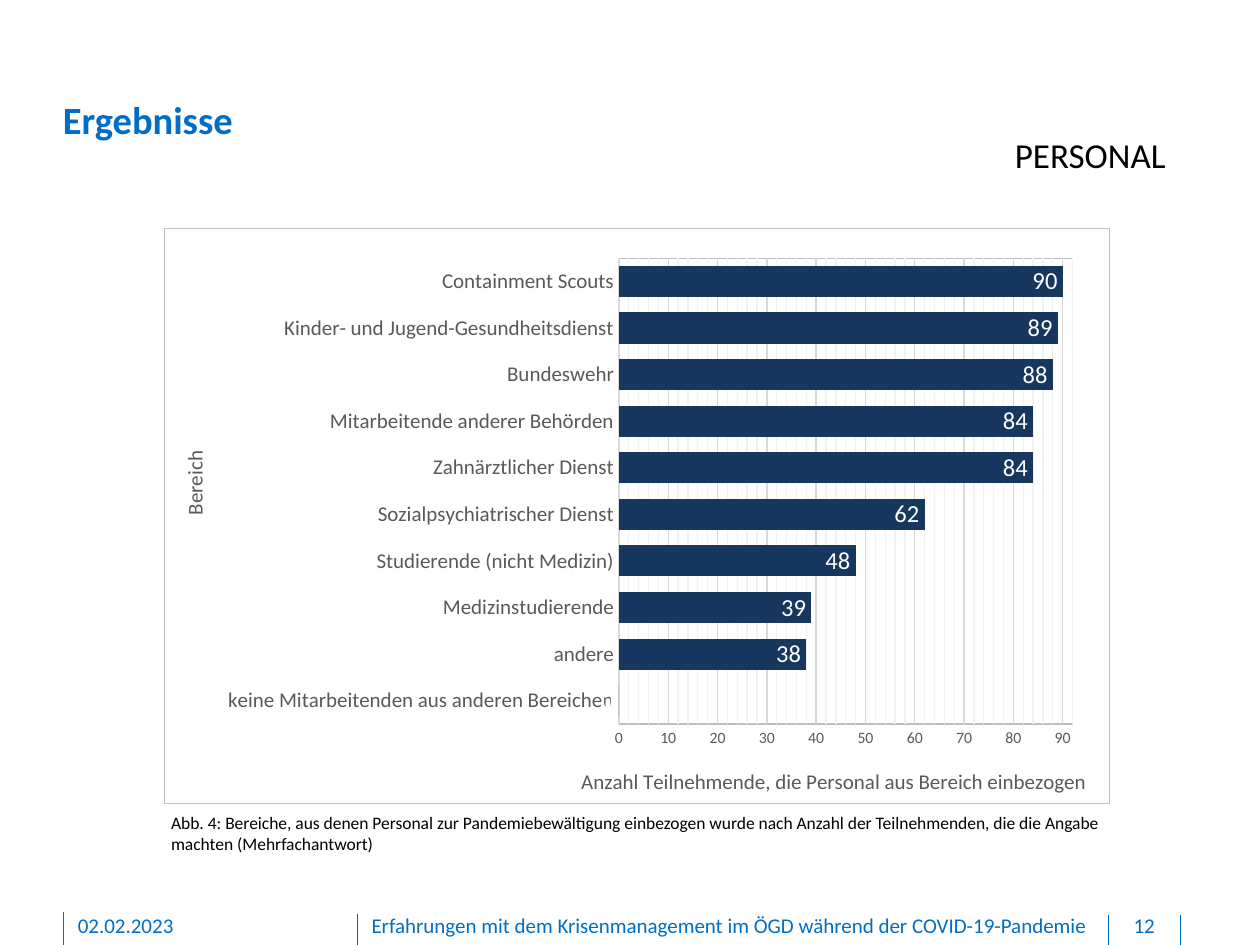
"""Build the results slide on staff areas with a horizontal bar chart."""
from copy import deepcopy

from lxml import etree
from pptx import Presentation
from pptx.chart.data import CategoryChartData
from pptx.dml.color import RGBColor
from pptx.enum.chart import XL_CHART_TYPE, XL_LABEL_POSITION, XL_TICK_MARK
from pptx.enum.shapes import MSO_CONNECTOR
from pptx.enum.text import PP_ALIGN
from pptx.oxml import parse_xml
from pptx.oxml.ns import nsdecls, qn
from pptx.util import Cm, Pt

BAR = XL_CHART_TYPE.BAR_CLUSTERED
INSIDE_END = XL_LABEL_POSITION.INSIDE_END
NO_TICK = XL_TICK_MARK.NONE
STRAIGHT = MSO_CONNECTOR.STRAIGHT
LEFT, CENTER, RIGHT = PP_ALIGN.LEFT, PP_ALIGN.CENTER, PP_ALIGN.RIGHT

BLUE = RGBColor(0x00, 0x6E, 0xC7)
NAVY = RGBColor(0x17, 0x37, 0x5E)
BLACK = RGBColor(0x00, 0x00, 0x00)
WHITE = RGBColor(0xFF, 0xFF, 0xFF)
GRAY = RGBColor(0x59, 0x59, 0x59)
BORDER = RGBColor(0xBF, 0xBF, 0xBF)
GRID = RGBColor(0xD9, 0xD9, 0xD9)
MINOR_GRID = RGBColor(0xF2, 0xF2, 0xF2)
FONT = "Calibri"


def set_font(font, size, color, bold=False):
    values = {"name": FONT, "size": Pt(size), "bold": bold}
    for key, value in values.items():
        setattr(font, key, value)
    font.color.rgb = color


def set_layout(parent, index, **values):
    for old in parent.findall(qn("c:layout")):
        parent.remove(old)
    layout = etree.Element(qn("c:layout"))
    manual = etree.SubElement(layout, qn("c:manualLayout"))
    for key, value in values.items():
        etree.SubElement(manual, qn(f"c:{key}")).set("val", str(value))
    parent.insert(index, layout)


prs = Presentation()
prs.slide_width, prs.slide_height = Cm(25.4), Cm(19.05)
s = prs.slides.add_slide(prs.slide_layouts[6])

for x, top in [(7.21, 18.42), (1.27, 18.39), (23.8, 18.44), (22.35, 18.44)]:
    sp = s.shapes.add_connector(STRAIGHT, Cm(x), Cm(top), Cm(x), Cm(19.05))
    sp.line.color.rgb = BLUE
    sp.line.width = Pt(0.5)
    etree.SubElement(sp._element.spPr, qn("a:effectLst"))

FOOTER = (0, 0, 0, 0.13)
PADDED = (0.25, 0.13, 0.25, 0.13)
texts = [
    ("02.02.2023", (1.57, 18.39, 5.16, 0.53), FOOTER, LEFT, 12, BLUE, False),
    ("Erfahrungen mit dem Krisenmanagement im ÖGD während der COVID-19-Pandemie",
     (7.49, 18.39, 14.6, 0.53), FOOTER, LEFT, 12, BLUE, False),
    ("12", (22.38, 18.39, 1.37, 0.53), FOOTER, CENTER, 12, BLUE, False),
    ("Ergebnisse", (1.27, 1.93, 22.48, 0.94), (0, 0, 0, 0), LEFT, 22, BLUE, True),
    ("PERSONAL", (8.92, 2.57, 14.83, 1.12), PADDED, RIGHT, 20, BLACK, False),
    ("Abb. 4: Bereiche, aus denen Personal zur Pandemiebewältigung einbezogen wurde "
     "nach Anzahl der Teilnehmenden, die die Angabe machten (Mehrfachantwort)",
     (3.2, 16.23, 19.46, 1.12), PADDED, LEFT, 10, BLACK, False),
]
for text, box, insets, align, size, color, bold in texts:
    tf = s.shapes.add_textbox(*map(Cm, box)).text_frame
    tf.word_wrap = True
    for side, inset in zip(("left", "top", "right", "bottom"), insets):
        setattr(tf, f"margin_{side}", Cm(inset))
    p = tf.paragraphs[0]
    p.alignment = align
    r = p.add_run()
    r.text = text
    set_font(r.font, size, color, bold)

areas = {
    "keine Mitarbeitenden aus anderen Bereichen": 0,
    "andere": 38,
    "Medizinstudierende": 39,
    "Studierende (nicht Medizin)": 48,
    "Sozialpsychiatrischer Dienst": 62,
    "Zahnärztlicher Dienst": 84,
    "Mitarbeitende anderer Behörden": 84,
    "Bundeswehr": 88,
    "Kinder- und Jugend-Gesundheitsdienst": 89,
    "Containment Scouts": 90,
}
data = CategoryChartData()
data.categories = list(areas)
data.add_series("Series 1", list(areas.values()))
chart = s.shapes.add_chart(BAR, Cm(3.3), Cm(4.6), Cm(19.08), Cm(11.61), data).chart
set_font(chart.font, 10, BLACK)
chart.has_legend = False
chart.has_title = False

plot = chart.plots[0]
plot.gap_width = 50
plot.vary_by_categories = False
plot.series[0].format.fill.solid()
plot.series[0].format.fill.fore_color.rgb = NAVY
plot.has_data_labels = True
labels = plot.data_labels
labels.show_value = True
labels.position = INSIDE_END
set_font(labels.font, 14, WHITE)

cat, val = chart.category_axis, chart.value_axis
scale = {"minimum_scale": 0, "maximum_scale": 92, "major_unit": 10, "minor_unit": 2,
         "has_major_gridlines": True, "has_minor_gridlines": True}
for key, value in scale.items():
    setattr(val, key, value)
axes = [
    (cat, "Bereich", 12, 0.013, 0.38),
    (val, "Anzahl Teilnehmende, die Personal aus Bereich einbezogen", 9, 0.437, 0.93),
]
for axis, title, size, x, y in axes:
    axis.major_tick_mark = axis.minor_tick_mark = NO_TICK
    set_font(axis.tick_labels.font, size, GRAY)
    tf = axis.axis_title.text_frame
    r = tf.paragraphs[0].add_run()
    r.text = title
    set_font(r.font, 12, GRAY)
    set_layout(axis.axis_title._element, 1, xMode="edge", yMode="edge", x=x, y=y)
    if axis is cat:
        tf._txBody.bodyPr.set("rot", "-5400000")
        tf._txBody.bodyPr.set("vert", "horz")
val.format.line.fill.background()
for lines in (cat.format.line, val.major_gridlines.format.line):
    lines.color.rgb = GRID
    lines.width = Pt(0.75)

space = chart._chartSpace
area = space.find(".//" + qn("c:plotArea"))
minor = area.find(".//" + qn("c:minorGridlines"))
minor.append(deepcopy(area.find(f".//{qn('c:majorGridlines')}/{qn('c:spPr')}")))
minor.find(".//" + qn("a:srgbClr")).set("val", str(MINOR_GRID))
set_layout(area, 0, layoutTarget="inner", xMode="edge", yMode="edge",
           x=0.481, y=0.051, w=0.48, h=0.811)
frame = (f'<c:spPr {nsdecls("c", "a")}><a:noFill/><a:ln w="{Pt(0.75)}"><a:solidFill>'
         f'<a:srgbClr val="{BORDER}"/></a:solidFill></a:ln></c:spPr>')
area.append(parse_xml(frame))
space.find(qn("c:chart")).addnext(parse_xml(frame))

prs.save("out.pptx")
